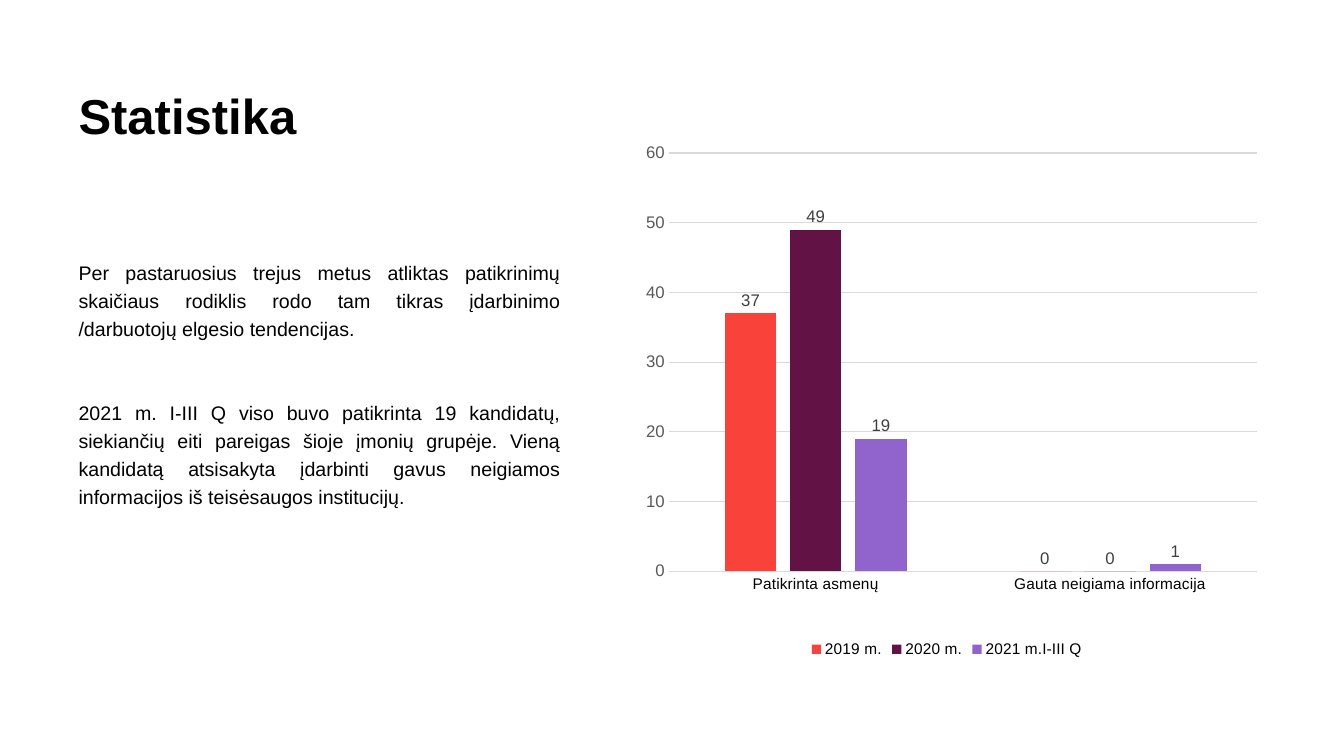
from pptx import Presentation
from pptx import util as u
from pptx.chart import data as chart_data
from pptx.dml import color
from pptx.enum import chart as kinds, text
from pptx.oxml import parse_xml
from pptx.oxml.ns import nsdecls, qn

FONT = "Arial"
COLORS = {
    "text": "000000",
    "axis": "595959",
    "label": "404040",
    "line": "D9D9D9",
    "2019 m.": "F8423A",
    "2020 m.": "621244",
    "2021 m.I-III Q": "9063CD",
}
CATEGORIES = ["Patikrinta asmenų", "Gauta neigiama informacija"]
CHECKS = {"2019 m.": (37, 0), "2020 m.": (49, 0), "2021 m.I-III Q": (19, 1)}
PLOT_AREA = {"x": 0.076, "y": 0.132, "w": 0.897, "h": 0.713}
TITLE = "Statistika"
BODY = [
    "Per pastaruosius trejus metus atliktas patikrinimų skaičiaus rodiklis rodo "
    "tam tikras įdarbinimo /darbuotojų elgesio tendencijas.",
    "2021 m. I-III Q viso buvo patikrinta 19 kandidatų, siekiančių eiti pareigas "
    "šioje įmonių grupėje. Vieną kandidatą atsisakyta įdarbinti gavus neigiamos "
    "informacijos iš teisėsaugos institucijų.",
]


def rgb(name):
    return color.RGBColor.from_string(COLORS[name])


def style_font(font, size, name="text", bold=False):
    font.name = FONT
    font.size = u.Pt(size)
    font.bold = bold
    font.color.rgb = rgb(name)


def style_line(line):
    line.color.rgb = rgb("line")
    line.width = u.Pt(0.75)


def add_text(page, place, paragraphs, size, spacing, align, gap=0, bold=False):
    box = page.shapes.add_textbox(*map(u.Pt, place))
    frame = box.text_frame
    frame.word_wrap = True
    for index, words in enumerate(paragraphs):
        para = frame.add_paragraph() if index else frame.paragraphs[0]
        para.alignment = align
        para.line_spacing = spacing
        if index:
            para.space_before = u.Pt(gap)
        span = para.add_run()
        span.text = words
        style_font(span.font, size, bold=bold)


def set_plot_area(chart):
    """Fix the inner plot area as fractions of the chart's size."""
    plot_area = chart._chartSpace.chart.plotArea
    for layout in plot_area.findall(qn("c:layout")):
        plot_area.remove(layout)
    modes = "".join(f'<c:{side}Mode val="edge"/>' for side in "xy")
    sizes = "".join(f'<c:{key} val="{value}"/>' for key, value in PLOT_AREA.items())
    plot_area.insert(0, parse_xml(
        f'<c:layout {nsdecls("c")}><c:manualLayout><c:layoutTarget val="inner"/>'
        f"{modes}{sizes}</c:manualLayout></c:layout>"))


def style_axes(chart):
    for axis, size, name in ((chart.category_axis, 11, "text"),
                             (chart.value_axis, 12, "axis")):
        axis.major_tick_mark = axis.minor_tick_mark = kinds.XL_TICK_MARK.NONE
        style_font(axis.tick_labels.font, size, name)
    style_line(chart.category_axis.format.line)
    values = chart.value_axis
    values.minimum_scale, values.maximum_scale, values.major_unit = 0, 60, 10
    values.format.line.fill.background()
    values.has_major_gridlines = True
    style_line(values.major_gridlines.format.line)


def style_series(series):
    series.format.fill.solid()
    series.format.fill.fore_color.rgb = rgb(series.name)
    labels = series.data_labels
    labels.show_value = True
    labels.position = kinds.XL_LABEL_POSITION.OUTSIDE_END
    style_font(labels.font, 12, "label")


def add_column_chart(page, place):
    numbers = chart_data.CategoryChartData()
    numbers.categories = CATEGORIES
    for name, values in CHECKS.items():
        numbers.add_series(name, values)
    chart = page.shapes.add_chart(
        kinds.XL_CHART_TYPE.COLUMN_CLUSTERED, *map(u.Pt, place), numbers).chart
    style_font(chart.font, 10)
    chart.has_title = False
    chart.has_legend = True
    chart.legend.position = kinds.XL_LEGEND_POSITION.BOTTOM
    chart.legend.include_in_layout = False
    style_font(chart.legend.font, 11)
    plot = chart.plots[0]
    plot.vary_by_categories = False
    plot.gap_width = 219
    plot.overlap = -27
    for series in plot.series:
        style_series(series)
    style_axes(chart)
    set_plot_area(chart)


def main():
    deck = Presentation()
    deck.slide_width, deck.slide_height = u.Pt(960), u.Pt(540)
    page = deck.slides.add_slide(deck.slide_layouts[6])
    add_text(page, (49, 62.6, 348, 61), [TITLE], 35, 0.9,
             text.PP_ALIGN.LEFT, bold=True)
    add_text(page, (49, 179.3, 358.5, 186), BODY, 14, u.Pt(20),
             text.PP_ALIGN.JUSTIFY, gap=40)
    add_column_chart(page, (442, 54, 468.7, 419))
    deck.save("out.pptx")


if __name__ == "__main__":
    main()
